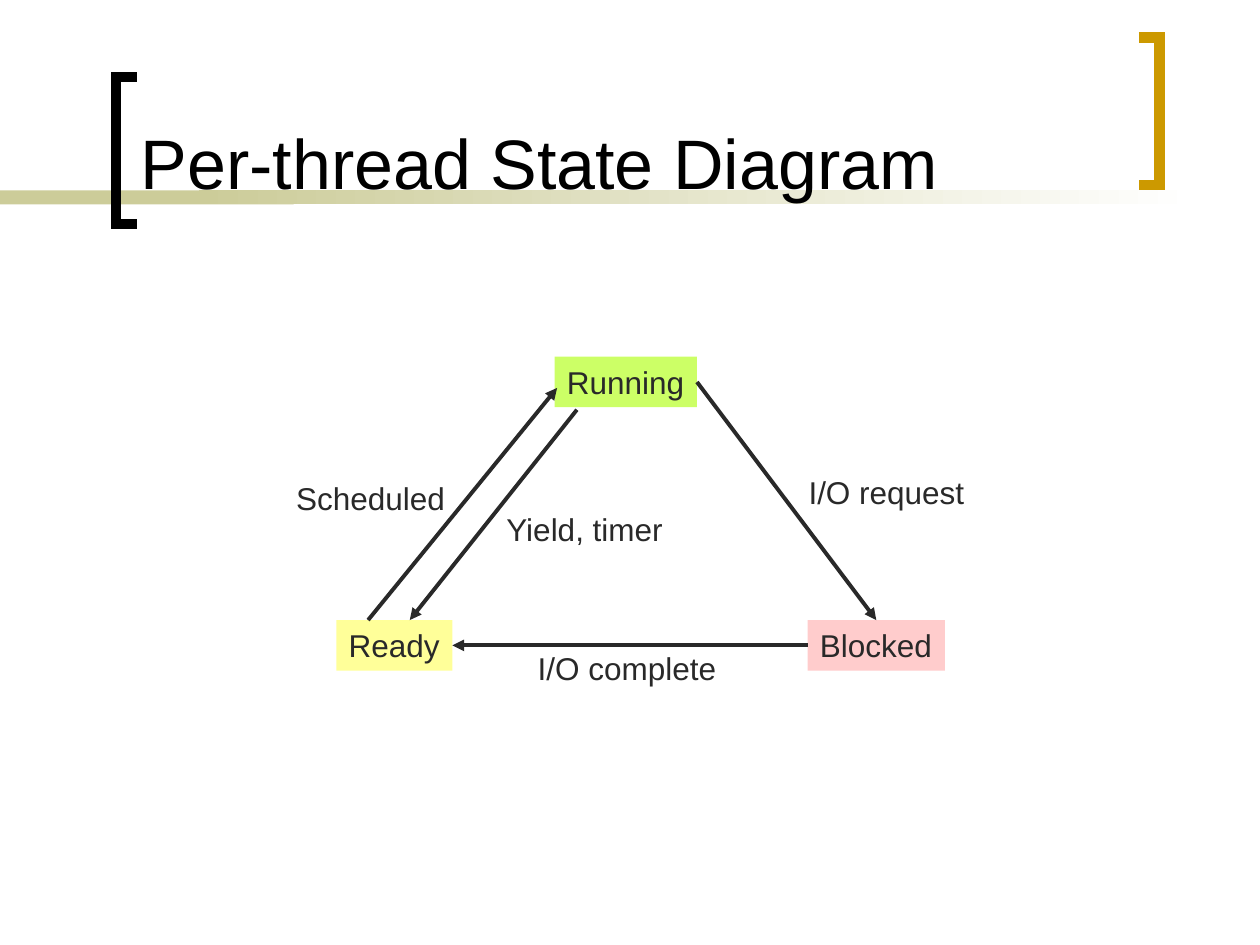
from pptx import Presentation
from pptx.dml.color import RGBColor
from pptx.enum.shapes import MSO_CONNECTOR, MSO_SHAPE
from pptx.enum.text import MSO_ANCHOR, MSO_AUTO_SIZE
from pptx.oxml.ns import qn
from pptx.util import Cm, Pt
from lxml.etree import SubElement

THEME = {
    "font": "Arial", "title_size": 40, "label_size": 18,
    "title": "000000", "ink": "292929", "band": "CCCC99", "paper": "FFFFFF",
    "left_bracket": "000000", "right_bracket": "CC9900",
    "ready": "FFFF99", "running": "CCFF66", "blocked": "FFCCCC",
    "arrow_width": 2.25, "bracket_width": 6,
}

# Content: all lengths in centimetres
TITLE = "Per-thread State Diagram"
ROW_HEIGHT = 1.02
STATES = [  # text, colour, left, top, width
    ("Ready", "ready", 6.78, 12.5, 2.34),
    ("Running", "running", 11.18, 7.19, 2.87),
    ("Blocked", "blocked", 16.28, 12.5, 2.77),
]
LABELS = [  # text, left, top, width
    ("Yield, timer", 9.96, 10.16, 3.68),
    ("I/O complete", 10.59, 12.95, 4.11),
    ("Scheduled", 5.72, 9.53, 3.51),
    ("I/O request", 16.05, 9.42, 3.66),
]
TOP, LEFT, RIGHT = 0, 1, 3
JOINED_ARROWS = [  # from state and side, to state and side
    ("Blocked", LEFT, "Ready", RIGHT),
    ("Running", RIGHT, "Blocked", TOP),
]
FREE_ARROWS = [  # start, end
    ((11.63, 8.26), (8.26, 12.5)),
    ((7.42, 12.5), (11.23, 7.82)),
]
BRACKET_DEPTH, BRACKET_HEIGHT = 0.42, 2.97
BRACKETS = [  # colour, x of the open ends, x of the spine, top
    ("left_bracket", 2.34 + BRACKET_DEPTH, 2.34, 1.55),
    ("right_bracket", 22.96, 22.96 + BRACKET_DEPTH, 0.76),
]
BAND_TOP, BAND_HEIGHT, BAND_SPLIT, BAND_END = 3.84, 0.28, 5.92, 24.13


def colour(key):
    return RGBColor.from_string(THEME[key])


def add_rectangle(slide, left, top, width, height):
    rectangle = slide.shapes.add_shape(
        MSO_SHAPE.RECTANGLE, Cm(left), Cm(top), Cm(width), Cm(height))
    rectangle.shadow.inherit = False
    rectangle.line.fill.background()
    return rectangle


def write(shape, text, size="label_size", ink="ink"):
    frame = shape.text_frame
    frame.text = text
    frame.word_wrap = False
    frame.auto_size = MSO_AUTO_SIZE.SHAPE_TO_FIT_TEXT
    frame.vertical_anchor = MSO_ANCHOR.TOP
    paragraph = frame.paragraphs[0]
    paragraph.alignment = 1
    font = paragraph.runs[0].font
    font.name, font.size = THEME["font"], Pt(THEME[size])
    font.color.rgb = colour(ink)


def add_text(slide, text, left, top, width, height=ROW_HEIGHT, **style):
    label = slide.shapes.add_textbox(Cm(left), Cm(top), Cm(width), Cm(height))
    write(label, text, **style)
    return label


def add_arrow(slide, start=(0, 0), end=(0, 0)):
    arrow = slide.shapes.add_connector(
        MSO_CONNECTOR.STRAIGHT, *(Cm(value) for value in start + end))
    arrow.line.color.rgb = colour("ink")
    arrow.line.width = Pt(THEME["arrow_width"])
    SubElement(arrow.line._get_or_add_ln(), qn("a:tailEnd"), type="triangle")
    SubElement(arrow._element.spPr, qn("a:effectLst"))
    return arrow


def add_bracket(slide, key, open_x, spine_x, top):
    bottom = top + BRACKET_HEIGHT
    builder = slide.shapes.build_freeform(Cm(open_x), Cm(top))
    builder.add_line_segments(
        [(Cm(x), Cm(y)) for x, y in
         ((spine_x, top), (spine_x, bottom), (open_x, bottom))], close=False)
    bracket = builder.convert_to_shape()
    bracket.shadow.inherit = False
    bracket.fill.background()
    bracket.line.color.rgb = colour(key)
    bracket.line.width = Pt(THEME["bracket_width"])
    SubElement(bracket.line._get_or_add_ln(), qn("a:miter"), lim="800000")


def main():
    deck = Presentation()
    deck.slide_width, deck.slide_height = Cm(25.4), Cm(19.05)
    slide = deck.slides.add_slide(deck.slide_layouts[6])

    # Band that fades to the right, and the brackets
    solid = add_rectangle(slide, 0, BAND_TOP, BAND_SPLIT, BAND_HEIGHT)
    solid.fill.solid()
    solid.fill.fore_color.rgb = colour("band")
    fade = add_rectangle(slide, 4.01, BAND_TOP, BAND_END - 4.01, BAND_HEIGHT)
    fade.fill.gradient()
    fade.fill.gradient_angle = 0
    for stop, position, key in zip(fade.fill.gradient_stops, (0, 1), ("band", "paper")):
        stop.position = position
        stop.color.rgb = colour(key)
    for bracket in BRACKETS:
        add_bracket(slide, *bracket)

    # Title
    title = add_text(slide, TITLE, 2.59, 0.28, 19.89, 3.94,
                     size="title_size", ink="title")
    title.text_frame.word_wrap = True
    title.text_frame.auto_size = MSO_AUTO_SIZE.NONE
    title.text_frame.vertical_anchor = MSO_ANCHOR.BOTTOM

    # States
    boxes = {}
    for text, key, left, top, width in STATES:
        box = boxes[text] = add_rectangle(slide, left, top, width, ROW_HEIGHT)
        box.fill.solid()
        box.fill.fore_color.rgb = colour(key)
        write(box, text)

    # Transitions and their labels
    for start, end in FREE_ARROWS:
        add_arrow(slide, start, end)
    for source, source_side, target, target_side in JOINED_ARROWS:
        arrow = add_arrow(slide)
        arrow.begin_connect(boxes[source], source_side)
        arrow.end_connect(boxes[target], target_side)
    for label in LABELS:
        add_text(slide, *label)

    deck.save("out.pptx")


if __name__ == "__main__":
    main()
